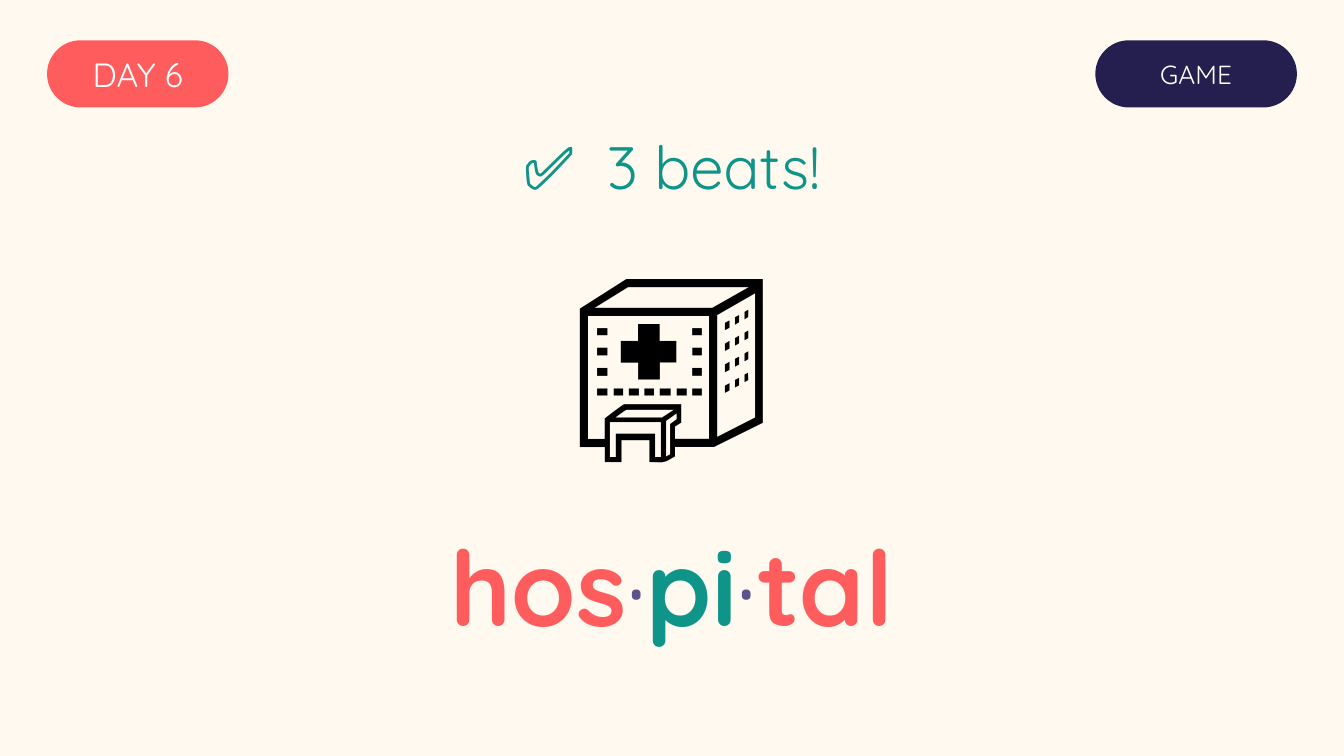
"""Build the syllable game answer slide for the word hospital."""
from pptx import Presentation
from pptx.dml.color import RGBColor
from pptx.enum.shapes import MSO_SHAPE
from pptx.enum.text import MSO_ANCHOR, PP_ALIGN
from pptx.util import Inches, Pt

PILL = MSO_SHAPE.ROUNDED_RECTANGLE
TOP, MIDDLE = MSO_ANCHOR.TOP, MSO_ANCHOR.MIDDLE
CENTER = PP_ALIGN.CENTER

FONT = "Quicksand"
CORAL, NAVY, TEAL, VIOLET = "FF5D5D", "241F4E", "0E9488", "5A548A"
WHITE, BLACK, CREAM = "FFFFFF", "000000", "FFF9EF"


def rgb(value):
    return RGBColor.from_string(value)


def write(sp, runs, size, font=FONT, anchor=MIDDLE):
    tf = sp.text_frame
    tf.word_wrap = True
    tf.vertical_anchor = anchor
    p = tf.paragraphs[0]
    p.alignment = CENTER
    for text, color, bold in runs:
        r = p.add_run()
        r.text = text
        r.font.name = font
        r.font.size = Pt(size)
        r.font.bold = bold
        r.font.color.rgb = rgb(color)
    return p


prs = Presentation()
prs.slide_width = Inches(10)
prs.slide_height = prs.slide_width * 9 // 16
W = prs.slide_width
U = W // 200
s = prs.slides.add_slide(prs.slide_layouts[6])
s.background.fill.solid()
s.background.fill.fore_color.rgb = rgb(CREAM)

for label, col, cols, fill, size in (
    ("DAY 6", 7, 27, CORAL, 18),
    ("GAME", 163, 30, NAVY, 14),
):
    sp = s.shapes.add_shape(PILL, col * U, 6 * U, cols * U, 10 * U)
    sp.adjustments[0] = 0.5
    sp.shadow.inherit = False
    sp.fill.solid()
    sp.fill.fore_color.rgb = rgb(fill)
    sp.line.fill.background()
    tf = sp.text_frame
    tf.margin_left = tf.margin_right = tf.margin_top = tf.margin_bottom = 0
    write(sp, [(label, WHITE, False)], size)

beats = s.shapes.add_textbox(0, int(18.4 * U), W, int(12.4 * U))
p = write(beats, [(text, TEAL, False) for text in ("✅", " ", "3 beats!")], 32)
p.runs[1].font._element.set("spc", "800")

icon = s.shapes.add_textbox(0, 33 * U, W, 32 * U)
write(icon, [("🏥", BLACK, False)], 105, "Calibri", TOP)

word = s.shapes.add_textbox(0, 78 * U, W, 18 * U)
syllables = [
    ("hos", CORAL, True),
    ("·", VIOLET, False),
    ("pi", TEAL, True),
    ("·", VIOLET, False),
    ("tal", CORAL, True),
]
write(word, syllables, 56)

prs.save("out.pptx")
